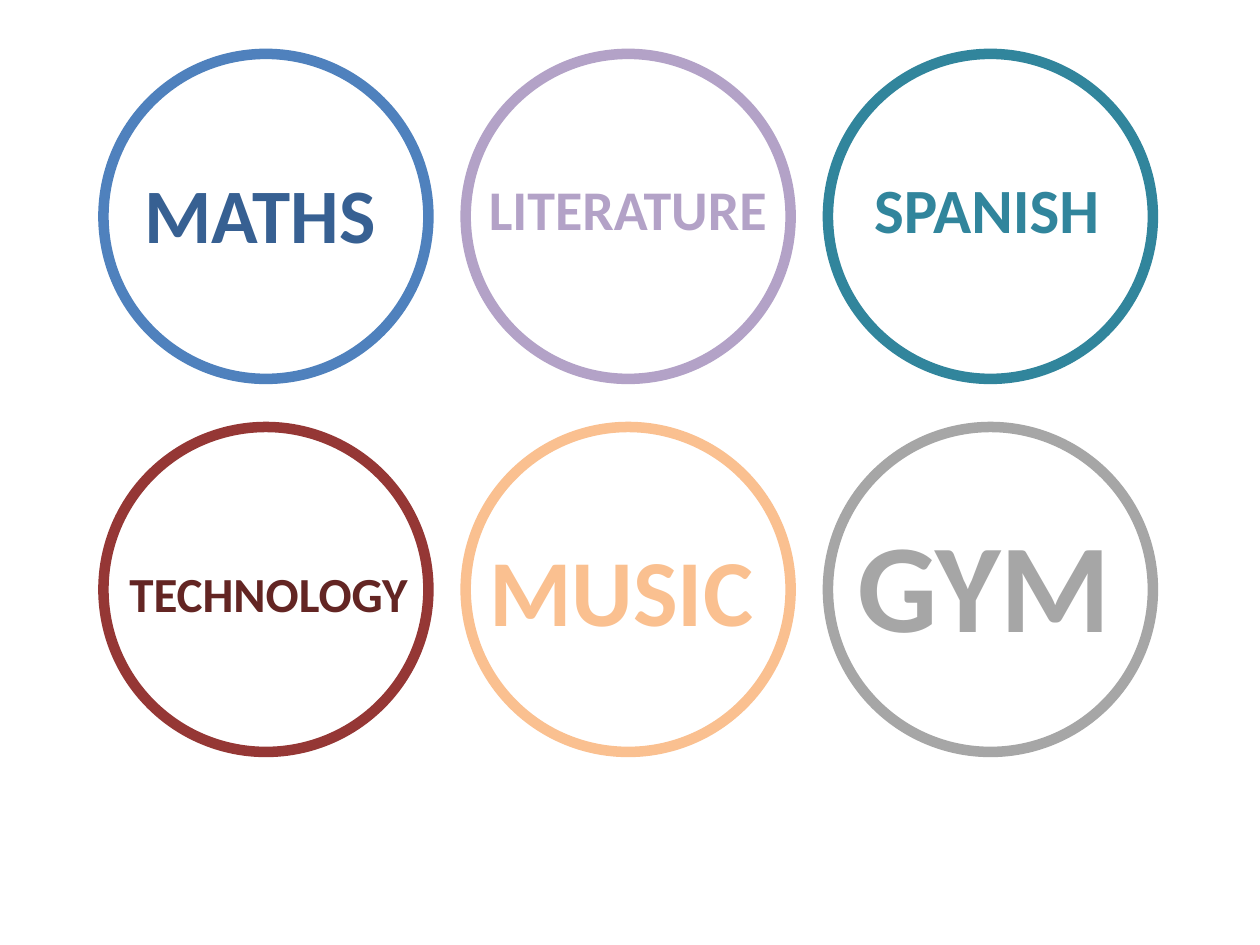
import pptx
import pptx.dml.color
import pptx.enum.shapes
import pptx.enum.text
import pptx.util

Pt = pptx.util.Pt
RGBColor = pptx.dml.color.RGBColor
JUSTIFY = pptx.enum.text.PP_ALIGN.JUSTIFY
LEFT = pptx.enum.text.PP_ALIGN.LEFT

BLUE = RGBColor(0x4F, 0x81, 0xBD)
DARK_BLUE = RGBColor(0x37, 0x60, 0x92)
PURPLE = RGBColor(0xB3, 0xA2, 0xC7)
TEAL = RGBColor(0x31, 0x85, 0x9C)
RED = RGBColor(0x95, 0x37, 0x35)
DARK_RED = RGBColor(0x63, 0x25, 0x23)
ORANGE = RGBColor(0xFA, 0xC0, 0x90)
GREY = RGBColor(0xA6, 0xA6, 0xA6)

DIAMETER = 185.7
GRID_LEFT, GRID_TOP = 59.1, 30.8
COLUMN_STEP, ROW_STEP = 207, 213.2
COLUMNS = 3

SUBJECTS = [
    ("MATHS", 44, BLUE, DARK_BLUE, JUSTIFY, (16.5, 60.6, 150.5, 60.5)),
    ("LITERATURE", 32, PURPLE, PURPLE, LEFT, (6.1, 65.4, 179.3, 46)),
    ("SPANISH", 36, TEAL, TEAL, LEFT, (19.4, 63, 165.6, 51)),
    ("TECHNOLOGY", 28, RED, DARK_RED, JUSTIFY, (7.7, 74.4, 185.7, 41)),
    ("MUSIC", 54, ORANGE, ORANGE, JUSTIFY, (6.3, 56.4, 185.7, 72.7)),
    ("GYM", 72, GREY, GREY, JUSTIFY, (9.6, 41.7, 185.7, 94.4)),
]


def add_ring(group, left, top, color):
    ring = group.shapes.add_shape(
        pptx.enum.shapes.MSO_SHAPE.OVAL, Pt(left), Pt(top), Pt(DIAMETER), Pt(DIAMETER)
    )
    ring.shadow.inherit = False
    ring.fill.background()
    ring.line.color.rgb = color
    ring.line.width = Pt(6)


def add_label(group, box, text, size, color, alignment):
    label = group.shapes.add_textbox(*map(Pt, box))
    frame = label.text_frame
    frame.word_wrap = True
    frame.auto_size = pptx.enum.text.MSO_AUTO_SIZE.SHAPE_TO_FIT_TEXT
    frame.text = text
    para = frame.paragraphs[0]
    para.alignment = alignment
    font = para.runs[0].font
    font.name = "Calibri"
    font.size = Pt(size)
    font.bold = True
    font.color.rgb = color


def add_subject(page, left, top, subject):
    text, size, ring_color, text_color, alignment, (x, y, width, height) = subject
    group = page.shapes.add_group_shape()
    add_ring(group, left, top, ring_color)
    box = (left + x, top + y, width, height)
    add_label(group, box, text, size, text_color, alignment)


def main():
    deck = pptx.Presentation()
    deck.slide_width = Pt(720)
    deck.slide_height = Pt(540)
    page = deck.slides.add_slide(deck.slide_layouts[6])
    for index, subject in enumerate(SUBJECTS):
        row, column = divmod(index, COLUMNS)
        left = GRID_LEFT + column * COLUMN_STEP
        top = GRID_TOP + row * ROW_STEP
        add_subject(page, left, top, subject)
    deck.save("out.pptx")


if __name__ == "__main__":
    main()
